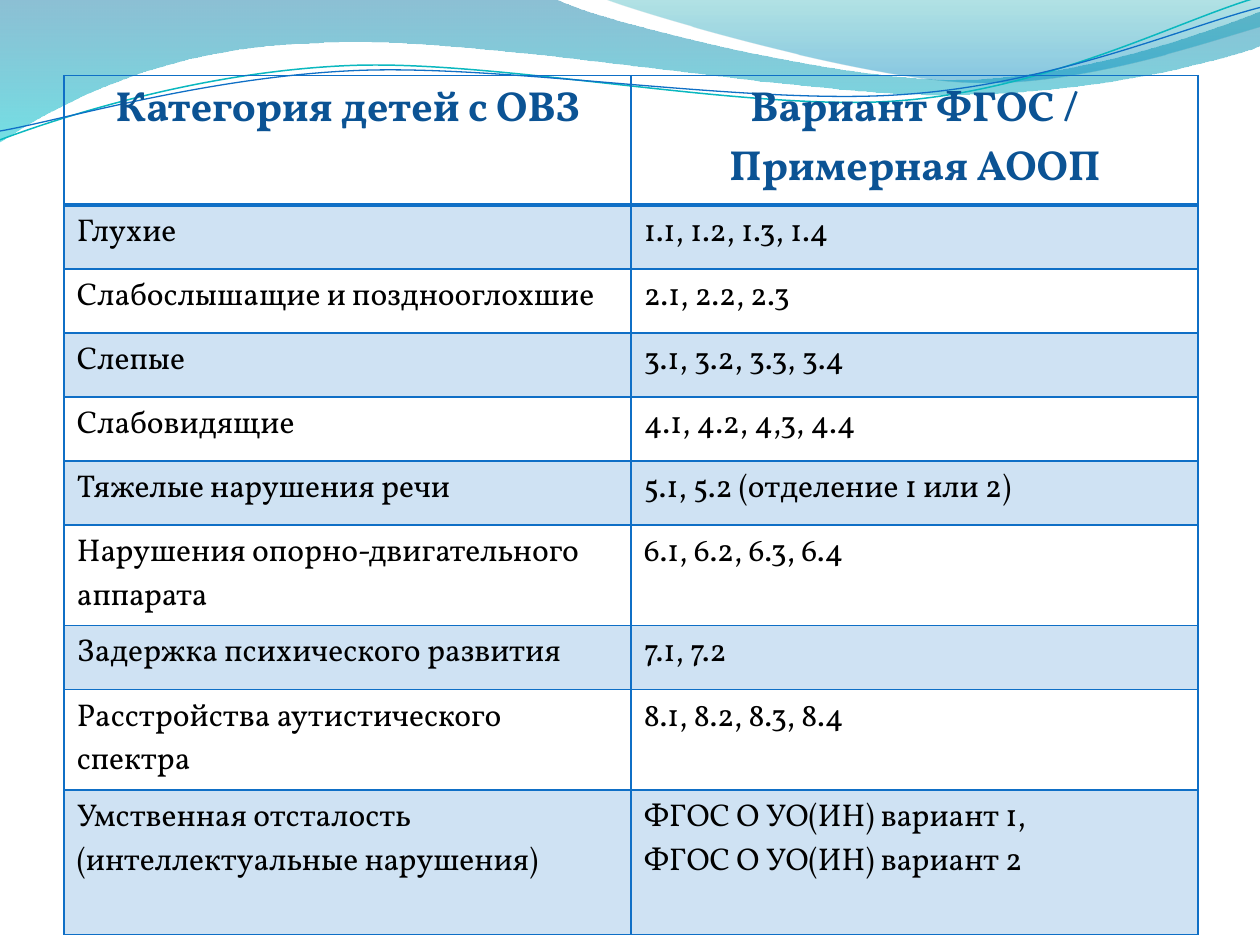
import math

import pptx
import pptx.util
from lxml import etree
from pptx.dml.color import RGBColor
from pptx.enum.text import PP_ALIGN
from pptx.oxml.ns import qn
from pptx.util import Inches, Pt

FONT = "Vollkorn"
COLORS = {
    "blue": "0F6FC6", "head": "0B5394", "text": "000000", "teal": "0AB8BF",
    "deep": "0074A1", "aqua": "00C6CF", "sea": "00A1A9", "sky": "008BBF",
}
TILT = 357.3

# Each path is a start point, then lines (x, y) or curves (x1, y1, x2, y2, x, y).
BANDS = [
    ([(0, 0), (4.4, -0.01), (4.76, 0.17, 6.64, 0.63, 7.58, 0.63),
      (8.53, 0.63, 9.58, 0.26, 10, 0.09), (10.01, 0.36),
      (9.83, 0.44, 8.7, 0.76, 7.46, 0.75), (6.22, 0.75, 3.82, 0.28, 2.57, 0.34),
      (1.29, 0.36, 0.46, 0.83, -0.01, 1.13), (0, 0)],
     [(0, "deep", 45), (1, "aqua", 55)]),
    ([(4.79, -0.01), (5.09, 0.11, 6.82, 0.62, 7.69, 0.65),
      (8.56, 0.69, 9.61, 0.32, 10, 0.21), (10, 0), (4.79, -0.01)],
     [(0, "sea", 30), (0.8, "sky", 45)]),
]
# Path, centre of the tilt, colour, width.
WAVES = [
    ([(0, 1.11), (0.48, 0.93, 1.58, 0.57, 2.77, 0.52),
      (3.95, 0.47, 5.93, 0.89, 7.13, 0.8), (8.33, 0.71, 9.38, 0.15, 9.98, -0.02)],
     (4.99, 0.58), "teal", 0.85),
    ([(0, 1.04), (0.47, 0.96, 1.64, 0.61, 2.83, 0.56),
      (4.03, 0.51, 5.97, 0.84, 7.17, 0.75), (8.36, 0.67, 9.41, 0.21, 10, 0.06)],
     (5, 0.59), "blue", 0.75),
]

ROWS = [
    ("Категория детей с ОВЗ", "Вариант ФГОС / Примерная АООП"),
    ("Глухие", "1.1, 1.2, 1.3, 1.4"),
    ("Слабослышащие и позднооглохшие", "2.1, 2.2, 2.3"),
    ("Слепые", "3.1, 3.2, 3.3, 3.4"),
    ("Слабовидящие", "4.1, 4.2, 4,3, 4.4"),
    ("Тяжелые нарушения речи", "5.1, 5.2 (отделение 1 или 2)"),
    ("Нарушения опорно-двигательного аппарата", "6.1, 6.2, 6.3, 6.4"),
    ("Задержка психического развития", "7.1, 7.2"),
    ("Расстройства аутистического спектра", "8.1, 8.2, 8.3, 8.4"),
    ("Умственная отсталость (интеллектуальные нарушения)",
     "ФГОС О УО(ИН) вариант 1,\nФГОС О УО(ИН) вариант 2"),
]


def color(name):
    return RGBColor.from_string(COLORS[name])


def set_alpha(node, share):
    """Give a colour element an opacity in percent."""
    etree.SubElement(node, qn("a:alpha")).set("val", str(share * 1000))


def turn(path, centre, angle):
    """Turn every point of a path clockwise about a centre."""
    cos, sin = math.cos(math.radians(angle)), math.sin(math.radians(angle))
    turned = []
    for part in path:
        flat = []
        for x, y in zip(part[::2], part[1::2]):
            x, y = x - centre[0], y - centre[1]
            flat += [centre[0] + x * cos - y * sin, centre[1] + x * sin + y * cos]
        turned.append(tuple(flat))
    return turned


def draw_path(shapes, left, top, path):
    """Draw a freeform, joining each three points of a curve into a Bezier."""
    points = [(left + Inches(x), top + Inches(y))
              for part in path for x, y in zip(part[::2], part[1::2])]
    pen = shapes.build_freeform(*points[0])
    pen.add_line_segments(points[1:], close=path[0] == path[-1])
    shape = pen.convert_to_shape()
    shape.shadow.inherit = False
    steps = shape._element.spPr.iter(qn("a:lnTo"))
    steps = iter(list(steps))
    for part in path[1:]:
        step = next(steps)
        if len(part) == 6:
            step.tag = qn("a:cubicBezTo")
            curve = etree.Element(qn("a:cubicBezTo"))
            step.addprevious(curve)
            for knot in (step, next(steps), next(steps)):
                curve.append(knot[0])
                knot.getparent().remove(knot)
    return shape


def add_waves(slide, left, top):
    for path, stops in BANDS:
        band = draw_path(slide.shapes, left, top, path)
        band.line.fill.background()
        band.fill.gradient()
        band.fill.gradient_angle = 270
        for stop, (place, name, share) in zip(band.fill.gradient_stops, stops):
            stop.position = place
            stop.color.rgb = color(name)
        tints = band._element.spPr.iter(qn("a:srgbClr"))
        for tint, (place, name, share) in zip(tints, stops):
            set_alpha(tint, share)
    group = slide.shapes.add_group_shape()
    for path, centre, name, width in WAVES:
        wave = draw_path(group.shapes, left, top, turn(path, centre, -TILT))
        wave.rotation = TILT
        wave.fill.background()
        wave.line.color.rgb = color(name)
        wave.line.width = Pt(width)


def set_edges(cell, row):
    """Draw the four borders, thicker between the head and the body."""
    props = cell._tc.get_or_add_tcPr()
    widths = {"L": 1, "R": 1, "T": 2 if row == 1 else 1, "B": 2 if row == 0 else 1}
    for spot, (side, width) in enumerate(widths.items()):
        edge = etree.Element(qn("a:ln" + side), w=str(Pt(width)))
        fill = etree.SubElement(edge, qn("a:solidFill"))
        etree.SubElement(fill, qn("a:srgbClr")).set("val", COLORS["blue"])
        props.insert(spot, edge)


def fill_cell(cell, text, row):
    head = row == 0
    if row % 2:
        cell.fill.solid()
        cell.fill.fore_color.rgb = color("blue")
        set_alpha(next(cell._tc.tcPr.iter(qn("a:srgbClr"))), 20)
    else:
        cell.fill.background()
    set_edges(cell, row)
    frame = cell.text_frame
    for spot, line in enumerate(text.split("\n")):
        para = frame.add_paragraph() if spot else frame.paragraphs[0]
        para.alignment = PP_ALIGN.CENTER if head else PP_ALIGN.LEFT
        run = para.add_run()
        run.text = line
        run.font.name = FONT
        run.font.size = Pt(24 if head else 18)
        run.font.bold = head
        run.font.color.rgb = color("head" if head else "text")


def add_grid(slide, left, top, width, height):
    frame = slide.shapes.add_table(len(ROWS), 2, left, top, width, height)
    table = frame.table
    table.first_row = table.horz_banding = False
    for row, texts in enumerate(ROWS):
        table.rows[row].height = Inches(6.1 / 12 if row else 0.62)
        for col, text in enumerate(texts):
            fill_cell(table.cell(row, col), text, row)
    for cell in table.rows[len(ROWS) - 1].cells:
        cell.margin_bottom = Inches(0.4)
    frame.height = height


def main():
    deck = pptx.Presentation()
    deck.slide_width, deck.slide_height = Inches(10), Inches(7.5)
    slide = deck.slides.add_slide(deck.slide_layouts[6])
    add_waves(slide, Inches(0), Inches(0))
    add_grid(slide, Inches(0.51), Inches(0.6), Inches(9), Inches(6.15))
    deck.save("out.pptx")


if __name__ == "__main__":
    main()
